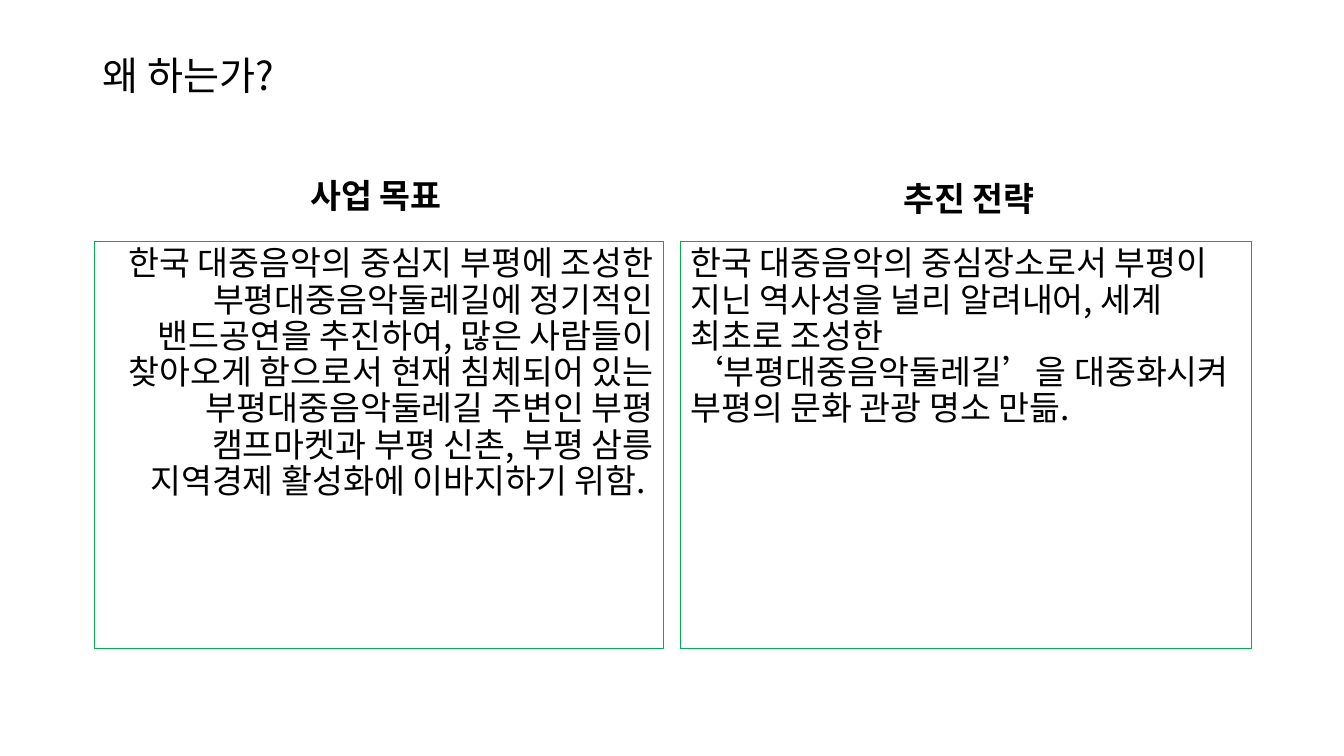
from dataclasses import dataclass
from typing import Optional

from lxml import etree
from pptx import Presentation
from pptx import util as u
from pptx.dml.color import RGBColor
from pptx.enum import shapes, text
from pptx.oxml import ns

FONT = "Noto Sans CJK KR"
BLACK, GREEN = "000000", "00B050"
LEFT, CENTER, RIGHT = text.PP_ALIGN.LEFT, text.PP_ALIGN.CENTER, text.PP_ALIGN.RIGHT
TOP, MIDDLE, BOTTOM = (text.MSO_ANCHOR.TOP, text.MSO_ANCHOR.MIDDLE,
                       text.MSO_ANCHOR.BOTTOM)


@dataclass
class Block:
    words: str
    left: float
    top: float
    width: float
    height: float
    align: text.PP_ALIGN = LEFT
    anchor: text.MSO_ANCHOR = TOP
    size: float = 24
    bold: bool = False
    before: float = 10
    border: Optional[str] = None


BOX_TOP, BOX_HEIGHT = 172.8, 290.2
BLOCKS = [
    Block("왜 하는가?", 66.2, 28.8, 167.8, 54, anchor=MIDDLE, size=28, before=0),
    Block("사업 목표", 65.5, 111.6, 406.1, 46.1, CENTER, BOTTOM, bold=True),
    Block("한국 대중음악의 중심지 부평에 조성한 부평대중음악둘레길에 정기적인 "
          "밴드공연을 추진하여, 많은 사람들이 찾아오게 함으로서 현재 침체되어 있는 "
          "부평대중음악둘레길 주변인 부평 캠프마켓과 부평 신촌, 부평 삼릉 "
          "지역경제 활성화에 이바지하기 위함. ",
          67.7, BOX_TOP, 406.1, BOX_HEIGHT, RIGHT, border=GREEN),
    Block("추진 전략", 488.2, 126.7, 408.2, 33.1, CENTER, BOTTOM, bold=True),
    Block("한국 대중음악의 중심장소로서 부평이 지닌 역사성을 널리 알려내어, 세계 "
          "최초로 조성한 ‘부평대중음악둘레길’을 대중화시켜 부평의 문화 관광 명소 만듦.",
          486, BOX_TOP, 408.2, BOX_HEIGHT, border=GREEN),
]


def color(hex_code: str) -> RGBColor:
    return RGBColor.from_string(hex_code)


def add_block(s, b: Block) -> None:
    """Draw a text box, or a bordered rectangle when the block has a border."""
    place = [u.Pt(v) for v in (b.left, b.top, b.width, b.height)]
    if b.border:
        sp = s.shapes.add_shape(shapes.MSO_SHAPE.RECTANGLE, *place)
        sp.shadow.inherit = False
        sp.fill.background()
        sp.line.color.rgb = color(b.border)
        sp.line.width = u.Pt(0.75)
    else:
        sp = s.shapes.add_textbox(*place)
    tf = sp.text_frame
    tf.word_wrap = True
    tf.vertical_anchor = b.anchor
    p = tf.paragraphs[0]
    p.alignment = b.align
    p.line_spacing = 0.9
    p.space_before = u.Pt(b.before)
    r = p.add_run()
    r.text = b.words
    r.font.name = FONT
    r.font.size = u.Pt(b.size)
    r.font.bold = b.bold
    r.font.color.rgb = color(BLACK)
    # Hangul takes its typeface from a:ea
    etree.SubElement(r.font._element, ns.qn("a:ea"), typeface=FONT)


def main() -> None:
    prs = Presentation()
    prs.slide_width, prs.slide_height = u.Pt(960), u.Pt(540)
    s = prs.slides.add_slide(prs.slide_layouts[6])
    for block in BLOCKS:
        add_block(s, block)
    prs.save("out.pptx")


if __name__ == "__main__":
    main()
